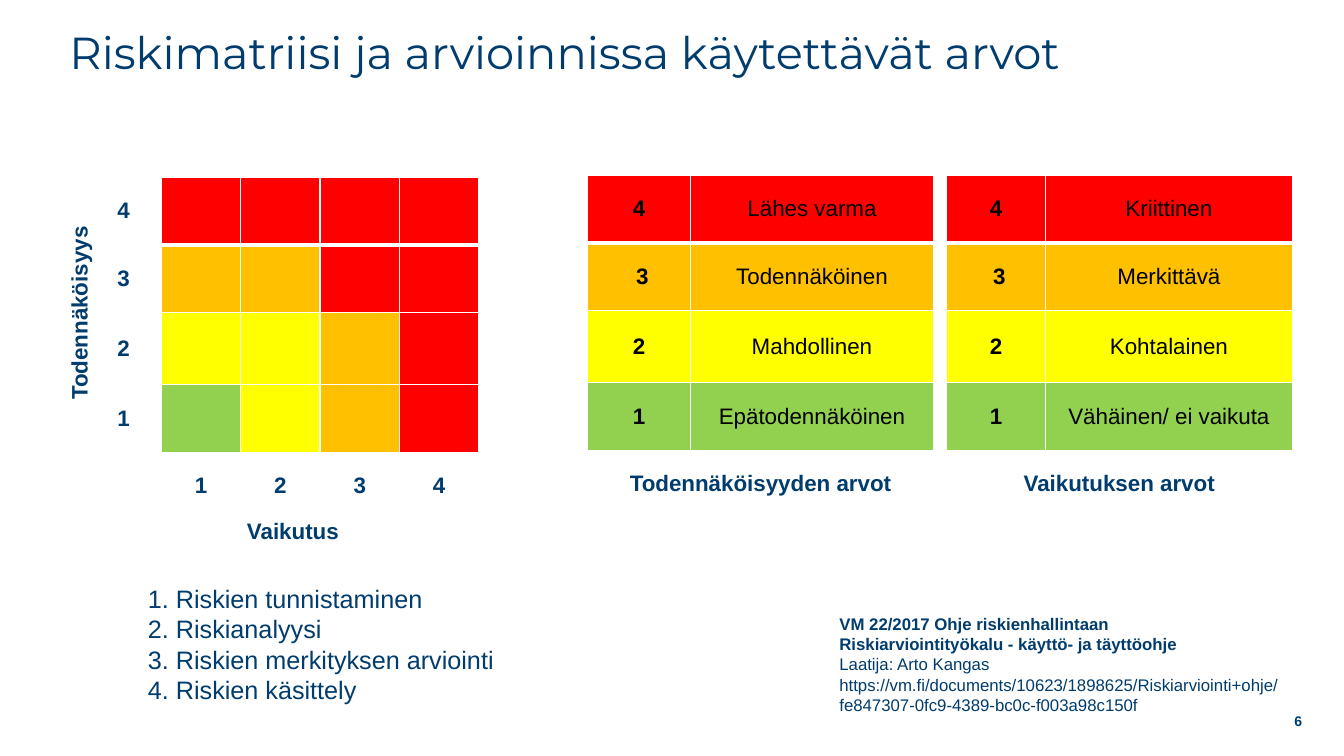
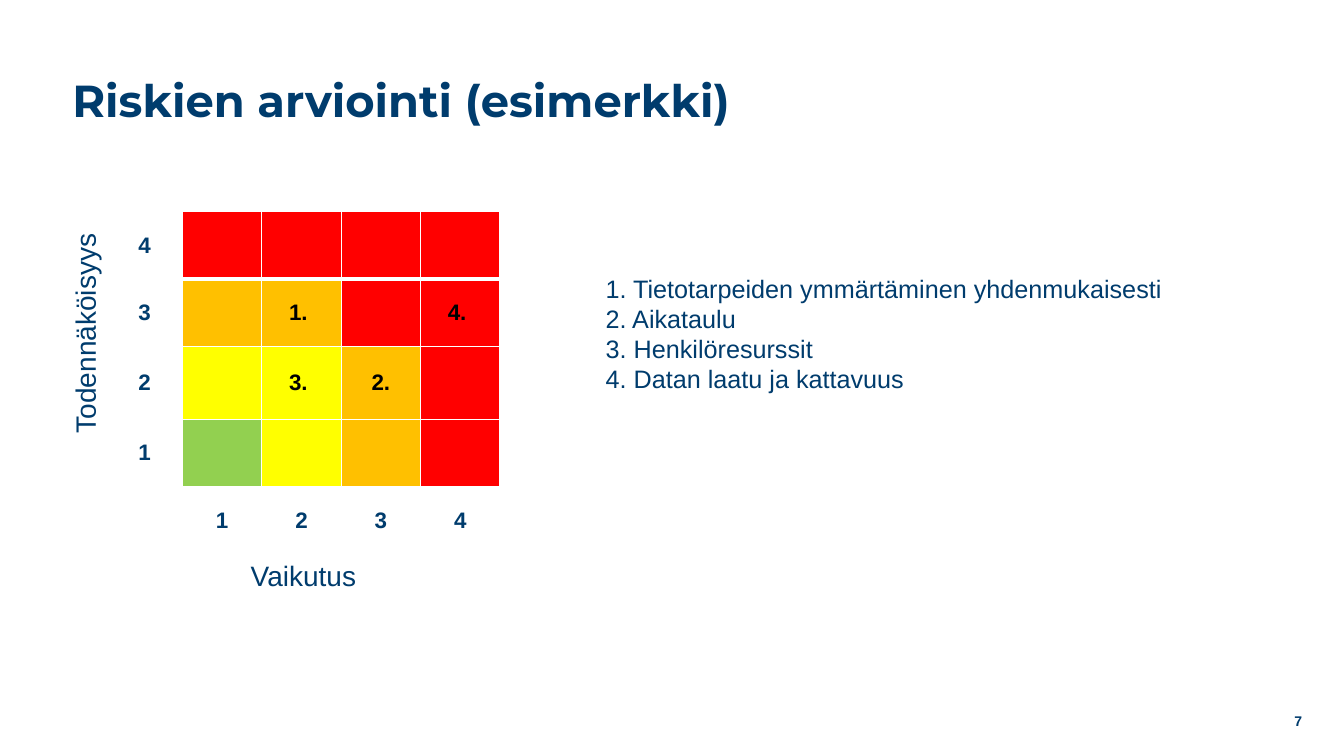
from lxml.etree import SubElement
from pptx import Presentation
from pptx.dml.color import RGBColor
from pptx.enum.text import MSO_ANCHOR, PP_ALIGN
from pptx.oxml.ns import qn
from pptx.util import Pt

COLORS = {
    "navy": "003C6D",
    "black": "000000",
    "white": "FFFFFF",
    "red": "FF0000",
    "orange": "FFC000",
    "yellow": "FFFF00",
    "green": "92D050",
}
TITLE_FONT, BODY_FONT = "Montserrat", "Arial"
ROW_HEIGHTS = [48.2, 48.2, 51.8, 48.2, 48.2]
MATRIX_COLS = [54] + [56.7] * 4
LEVELS = [4, 3, 2, 1]
LEVEL_COLORS = ["red", "orange", "yellow", "green"]
MATRIX_COLORS = [
    ["red", "red", "red", "red"],
    ["orange", "orange", "red", "red"],
    ["yellow", "yellow", "orange", "red"],
    ["green", "yellow", "orange", "red"],
]
SPACE = 4.5  # width of a space at 16 pt


def rgb(name):
    return RGBColor.from_string(COLORS[name])


def write(tf, text, size=16, bold=False, color="navy", font=BODY_FONT,
          align=PP_ALIGN.LEFT, spacing=None, bold_lines=0):
    """Fill a text frame, one paragraph per line of text."""
    for i, line in enumerate(text.split("\n")):
        p = tf.paragraphs[0] if i == 0 else tf.add_paragraph()
        p.alignment = align
        p.line_spacing = spacing
        r = p.add_run()
        r.text = line
        r.font.name = font
        r.font.size = Pt(size)
        r.font.bold = bold or i < bold_lines
        r.font.color.rgb = rgb(color)


def add_text(s, box, text, anchor=MSO_ANCHOR.TOP, wrap=True, right=7.2,
             rotation=0, **fmt):
    sp = s.shapes.add_textbox(*map(Pt, box))
    sp.rotation = rotation
    tf = sp.text_frame
    tf.word_wrap = wrap
    tf.vertical_anchor = anchor
    tf.margin_right = Pt(right)
    write(tf, text, **fmt)


def add_axis_label(s, center, text, width, rotation=0, **fmt):
    height = 30
    x, y = center
    add_text(s, (x - width / 2, y - height / 2, width, height), text,
             anchor=MSO_ANCHOR.MIDDLE, wrap=False, rotation=rotation,
             align=PP_ALIGN.CENTER, **fmt)


# Tables
def set_borders(cell, **widths):
    props = cell._tc.get_or_add_tcPr()
    for i, side in enumerate(("L", "R", "T", "B")):
        line = SubElement(props, qn(f"a:ln{side}"),
                          w=str(Pt(widths.get(side, 1))))
        fill = SubElement(line, qn("a:solidFill"))
        SubElement(fill, qn("a:srgbClr"), val=COLORS["white"])
        props.insert(i, line)


def add_grid(s, x, y, cols):
    """Table without style bands, with white rules and no fills."""
    frame = s.shapes.add_table(len(ROW_HEIGHTS), len(cols), Pt(x), Pt(y),
                               Pt(sum(cols)), Pt(sum(ROW_HEIGHTS)))
    table = frame.table
    table.first_row = table.horz_banding = False
    for col, width in zip(table.columns, cols):
        col.width = Pt(width)
    for i, (row, height) in enumerate(zip(table.rows, ROW_HEIGHTS)):
        row.height = Pt(height)
        for cell in row.cells:
            cell.fill.background()
            set_borders(cell, T=3 if i == 1 else 1, B=3 if i == 0 else 1)
    return table


def fill_cell(cell, color):
    cell.fill.solid()
    cell.fill.fore_color.rgb = rgb(color)


def write_cell(cell, text, pad_left=0, pad_right=0, **fmt):
    cell.vertical_anchor = MSO_ANCHOR.MIDDLE
    cell.margin_left, cell.margin_right = Pt(9.4 + pad_left), Pt(9.4 + pad_right)
    cell.margin_top = cell.margin_bottom = Pt(5)
    write(cell.text_frame, str(text), align=PP_ALIGN.CENTER, **fmt)


def add_matrix(s, x, y, likelihood_at, impact_at, marks=None, **label):
    """Risk matrix; axis labels are centred on offsets from its corner."""
    table = add_grid(s, x, y, MATRIX_COLS)
    for i, colors in enumerate(MATRIX_COLORS):
        write_cell(table.cell(i, 0), LEVELS[i], bold=True)
        write_cell(table.cell(4, i + 1), i + 1, bold=True)
        for j, color in enumerate(colors, 1):
            fill_cell(table.cell(i, j), color)
    for (i, j), (text, pad) in (marks or {}).items():
        write_cell(table.cell(i, j), text, pad_right=pad, bold=True, color="black")
    add_axis_label(s, (x + likelihood_at[0], y + likelihood_at[1]),
                   "Todennäköisyys", 158, rotation=270, **label)
    add_axis_label(s, (x + impact_at[0], y + impact_at[1]),
                   "Vaikutus", 90, **label)


def add_scale(s, x, y, cols, names, caption):
    """Four-level scale with a caption row below."""
    table = add_grid(s, x, y, cols)
    for i, (level, name, color) in enumerate(zip(LEVELS, names, LEVEL_COLORS)):
        number, label = table.cell(i, 0), table.cell(i, 1)
        write_cell(number, level, pad_left=SPACE if level == 3 else 0,
                   bold=True, color="black")
        write_cell(label, name, color="black")
        fill_cell(number, color)
        fill_cell(label, color)
    table.cell(4, 0).merge(table.cell(4, 1))
    write_cell(table.cell(4, 0), caption, bold=True)


# Slides
def new_slide(prs, title, number, title_at, bold=False):
    s = prs.slides.add_slide(prs.slide_layouts[6])
    add_text(s, (*title_at, 909, 60), title, anchor=MSO_ANCHOR.MIDDLE,
             size=32, bold=bold, font=TITLE_FONT, spacing=0.9)
    add_text(s, (885, 500.4, 45, 29), str(number), anchor=MSO_ANCHOR.MIDDLE,
             right=0, size=10, bold=True, align=PP_ALIGN.RIGHT)
    return s


def values_slide(prs):
    s = new_slide(prs, "Riskimatriisi ja arvioinnissa käytettävät arvot", 6,
                  (42.5, 9))
    add_matrix(s, 61.2, 126.7, (-5, 97), (148, 252), bold=True)
    add_scale(s, 419.8, 125.3, [73.4, 173.6],
              ["Lähes varma", "Todennäköinen", "Mahdollinen", "Epätodennäköinen"],
              "Todennäköisyyden arvot")
    add_scale(s, 676, 125.3, [71, 176],
              ["Kriittinen", "Merkittävä", "Kohtalainen", "Vähäinen/ ei vaikuta"],
              "Vaikutuksen arvot")
    # Steps and source
    add_text(s, (98.6, 413.3, 267, 94),
             "1. Riskien tunnistaminen\n2. Riskianalyysi\n"
             "3. Riskien merkityksen arviointi\n4. Riskien käsittely", size=18)
    add_text(s, (592.5, 434.9, 338.4, 80),
             "VM 22/2017 Ohje riskienhallintaan\n"
             "Riskiarviointityökalu - käyttö- ja täyttöohje\n"
             "Laatija: Arto Kangas\n"
             "https://vm.fi/documents/10623/1898625/Riskiarviointi+ohje/"
             "fe847307-0fc9-4389-bc0c-f003a98c150f", size=12, bold_lines=2)


def example_slide(prs):
    s = new_slide(prs, "Riskien arviointi (esimerkki)", 7, (44.6, 43.2), bold=True)
    # Risks by matrix cell, with the space that follows each number
    marks = {(1, 2): ("1.", SPACE), (1, 4): ("4.", SPACE),
             (2, 2): ("3.", SPACE), (2, 3): ("2.", 0)}
    add_matrix(s, 76.3, 151.2, (-15.8, 87), (140.4, 260), marks, size=20)
    add_text(s, (425.5, 191.5, 483, 94),
             "1. Tietotarpeiden ymmärtäminen yhdenmukaisesti\n2. Aikataulu\n"
             "3. Henkilöresurssit\n4. Datan laatu ja kattavuus", size=18)


def main():
    prs = Presentation()
    prs.slide_width, prs.slide_height = Pt(960), Pt(540)
    values_slide(prs)
    example_slide(prs)
    prs.save("out.pptx")


if __name__ == "__main__":
    main()
